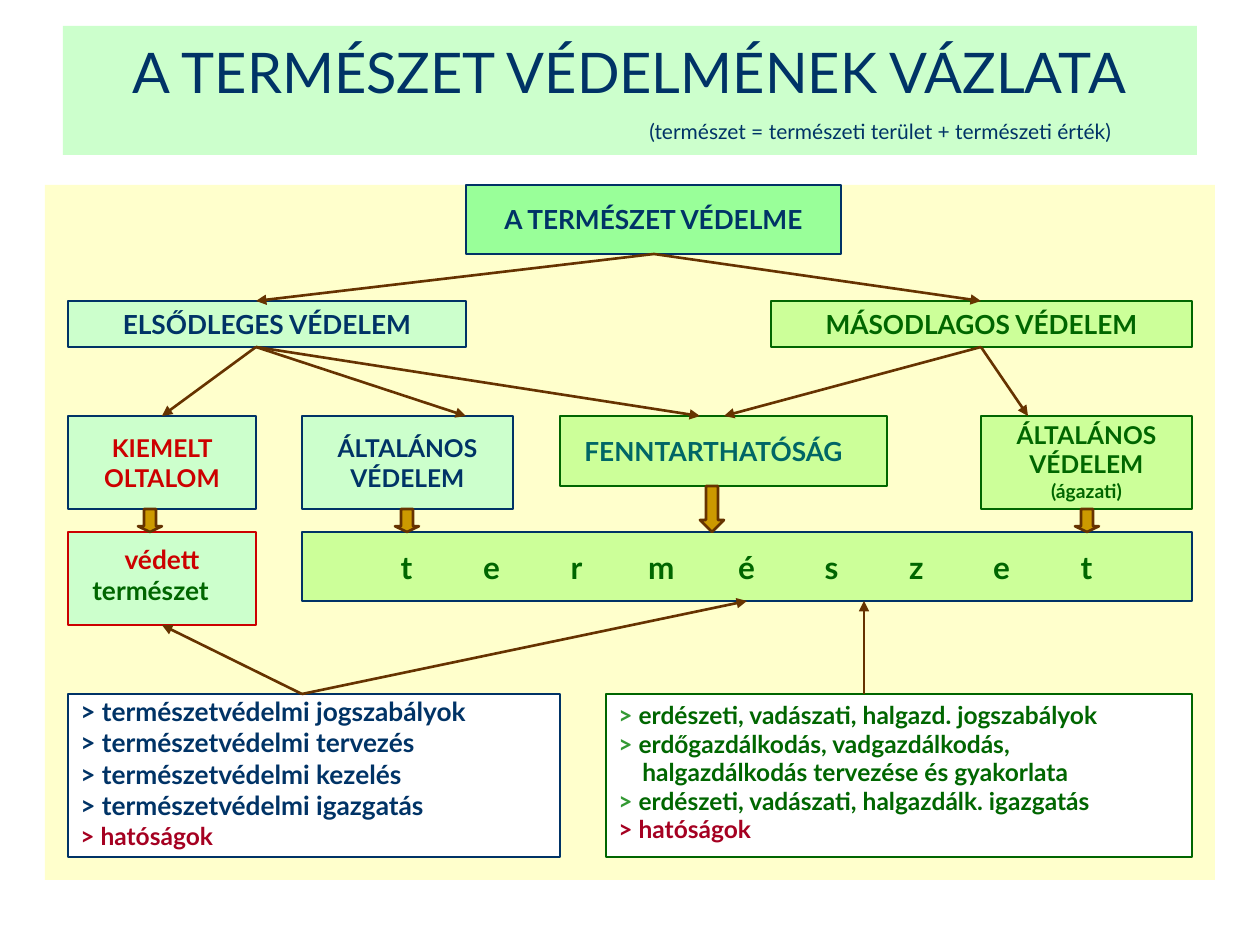
from dataclasses import dataclass

from lxml import etree
from pptx import Presentation, util as u
from pptx.dml import color as col
from pptx.enum import shapes, text
from pptx.oxml import ns

PX = 914400 / 126
KIND = shapes.MSO_SHAPE
BOX = KIND.FLOWCHART_PROCESS
MID, TOP = text.MSO_ANCHOR.MIDDLE, text.MSO_ANCHOR.TOP
LEFT, MIDDLE = text.PP_ALIGN.LEFT, text.PP_ALIGN.CENTER


def px(n):
    return u.Emu(round(n * PX))


@dataclass(frozen=True)
class Theme:
    font: str = "Lato"
    navy: str = "003366"
    green: str = "006600"
    leaf: str = "339933"
    teal: str = "006666"
    red: str = "CC0000"
    wine: str = "A50021"
    brown: str = "663300"
    gold: str = "CC9900"
    white: str = "FFFFFF"
    cream: str = "FFFFCC"
    mint: str = "CCFFCC"
    lime: str = "CCFF99"
    fresh: str = "99FF99"
    title: int = 32
    wide: int = 18
    head: int = 15
    body: int = 14
    note: int = 12
    small: int = 11
    thin: float = 1
    thick: float = 1.5


@dataclass
class Para:
    """One paragraph; runs holds (text, colour or None) pairs."""
    runs: list
    size: int
    color: str
    bold: bool = True
    align: int = MIDDLE
    indent: int = 0
    before: float = 0
    pitch: float = 1
    tabs: tuple = ()


class Deck:
    def __init__(self, theme):
        self.theme = theme
        self.show = Presentation()
        self.show.slide_width, self.show.slide_height = u.Inches(10), u.Inches(7.5)
        self.slide = self.show.slides.add_slide(self.show.slide_layouts[6])

    def rgb(self, code):
        return col.RGBColor.from_string(code)

    def shape(self, area, fill, line=None, width=1, kind=BOX):
        item = self.slide.shapes.add_shape(kind, *map(px, area))
        item.shadow.inherit = False
        item.fill.solid()
        item.fill.fore_color.rgb = self.rgb(fill)
        if line:
            item.line.color.rgb = self.rgb(line)
            item.line.width = u.Pt(width)
        else:
            item.line.fill.background()
        return item

    def box(self, area, fill, line, paras, width=1, inset=None, kind=BOX):
        """A filled box with text, centred in height unless a top inset is given."""
        frame = self.shape(area, fill, line, width, kind).text_frame
        frame.word_wrap = True
        frame.vertical_anchor = MID if inset is None else TOP
        if inset is not None:
            frame.margin_top = px(inset)
        for i, para in enumerate(paras):
            self.para(frame.add_paragraph() if i else frame.paragraphs[0], para)

    def para(self, p, data):
        props = p._p.get_or_add_pPr()
        if data.indent:
            props.set("marL", str(px(data.indent)))
        if data.tabs:
            stops = etree.SubElement(props, ns.qn("a:tabLst"))
            for pos in data.tabs:
                etree.SubElement(stops, ns.qn("a:tab"), pos=str(px(pos)), algn="ctr")
        p.alignment = data.align
        p.space_before = u.Pt(data.before)
        p.line_spacing = data.pitch
        p.font.name, p.font.size, p.font.bold = self.theme.font, u.Pt(data.size), data.bold
        p.font.color.rgb = self.rgb(data.color)
        for words, tint in data.runs:
            run = p.add_run()
            run.text = words
            if tint:
                run.font.color.rgb = self.rgb(tint)

    def label(self, area, fill, line, words, size, ink, width=1):
        self.box(area, fill, line, [Para([(words, None)], size, ink)], width)

    def arrow(self, start, end):
        item = self.slide.shapes.add_connector(
            shapes.MSO_CONNECTOR.STRAIGHT, *map(px, start + end))
        item.line.color.rgb = self.rgb(self.theme.brown)
        item.line.width = u.Pt(self.theme.thick)
        etree.SubElement(item.line._get_or_add_ln(), ns.qn("a:tailEnd"), type="triangle")
        etree.SubElement(item._element.spPr, ns.qn("a:effectLst"))

    def drop(self, mid, top, end, head):
        """A block arrow pointing down, centred on mid."""
        t = self.theme
        item = self.shape((mid - 12, top, 24, end - top), t.gold, t.brown, t.thick,
                          KIND.DOWN_ARROW)
        item.adjustments[0], item.adjustments[1] = 0.5, head


def main():
    t = Theme()
    deck = Deck(t)

    deck.box((63, 26, 1134, 129), t.mint, None, [
        Para([("A TERMÉSZET VÉDELMÉNEK VÁZLATA", None)], t.title, t.navy, bold=False),
        Para([("(természet = természeti terület + természeti érték)", None)], t.note,
             t.navy, bold=False, align=LEFT, indent=574, before=7.5),
    ], inset=12, kind=KIND.RECTANGLE)
    deck.shape((45, 185, 1170, 695), t.cream, kind=KIND.RECTANGLE)

    # Kinds of protection
    deck.label((466, 185, 375, 69), t.fresh, t.navy, "A TERMÉSZET VÉDELME",
               t.head, t.navy, t.thick)
    deck.label((68, 301, 398, 46), t.mint, t.navy, "ELSŐDLEGES VÉDELEM", t.head, t.navy)
    deck.label((771, 301, 421, 46), t.lime, t.green, "MÁSODLAGOS VÉDELEM", t.head, t.green)
    deck.label((68, 416, 188, 93), t.mint, t.navy, "KIEMELT OLTALOM", t.body, t.red)
    deck.label((302, 416, 211, 93), t.mint, t.navy, "ÁLTALÁNOS VÉDELEM", t.body, t.navy)
    deck.box((560, 416, 327, 70), t.lime, t.green, [
        Para([("FENNTARTHATÓSÁG", None)], t.head, t.teal, align=LEFT, indent=12),
    ], kind=KIND.RECTANGLE)
    deck.box((981, 416, 211, 93), t.lime, t.green, [
        Para([("ÁLTALÁNOS VÉDELEM", None)], t.body, t.green),
        Para([("(ágazati)", None)], t.small, t.green),
    ], inset=4)

    # What is protected
    deck.box((68, 532, 188, 93), t.mint, t.red, [
        Para([("védett", None)], t.head, t.red),
        Para([("természet", None)], t.head, t.green, align=LEFT, indent=12),
    ], inset=11)
    word = "természet"
    deck.box((302, 532, 890, 69), t.lime, t.navy, [
        Para([("\t" + "\t".join(word), None)], t.wide, t.green, align=LEFT,
             tabs=tuple(92 + 85 * i for i in range(len(word)))),
    ])

    # Means of protection
    means = [("természetvédelmi " + end, t.head, t.navy)
             for end in ("jogszabályok", "tervezés", "kezelés", "igazgatás")]
    means.append(("hatóságok", t.body, t.wine))
    deck.box((68, 694, 492, 163), t.white, t.navy, [
        Para([("> " + words, None)], size, ink, align=LEFT) for words, size, ink in means
    ], t.thick, inset=1, kind=KIND.RECTANGLE)

    rules = [
        ("> ", "erdészeti, vadászati, halgazd. jogszabályok", t.green, 0),
        ("> ", "erdőgazdálkodás, vadgazdálkodás,", t.green, 0),
        ("", "halgazdálkodás tervezése és gyakorlata", t.green, 24),
        ("> ", "erdészeti, vadászati, halgazdálk. igazgatás", t.green, 0),
        ("", "> hatóságok", t.wine, 0),
    ]
    deck.box((606, 694, 586, 163), t.white, t.green, [
        Para([(mark, t.leaf)] * bool(mark) + [(words, None)], t.body, ink,
             align=LEFT, indent=indent, pitch=0.97)
        for mark, words, ink, indent in rules
    ], t.thick, inset=8, kind=KIND.RECTANGLE)

    fans = {
        (654, 254): [(256, 301), (981, 301)],
        (256, 347): [(162, 416), (466, 416), (700, 416)],
        (981, 347): [(1028, 416), (724, 416)],
        (302, 694): [(162, 625), (747, 601)],
        (864, 694): [(864, 601)],
    }
    for start, ends in fans.items():
        for end in ends:
            deck.arrow(start, end)

    for mid in (150, 407, 1087):
        deck.drop(mid, 509, 532, 0.25)
    deck.drop(712, 486, 532, 0.5)

    deck.show.save("out.pptx")


if __name__ == "__main__":
    main()
